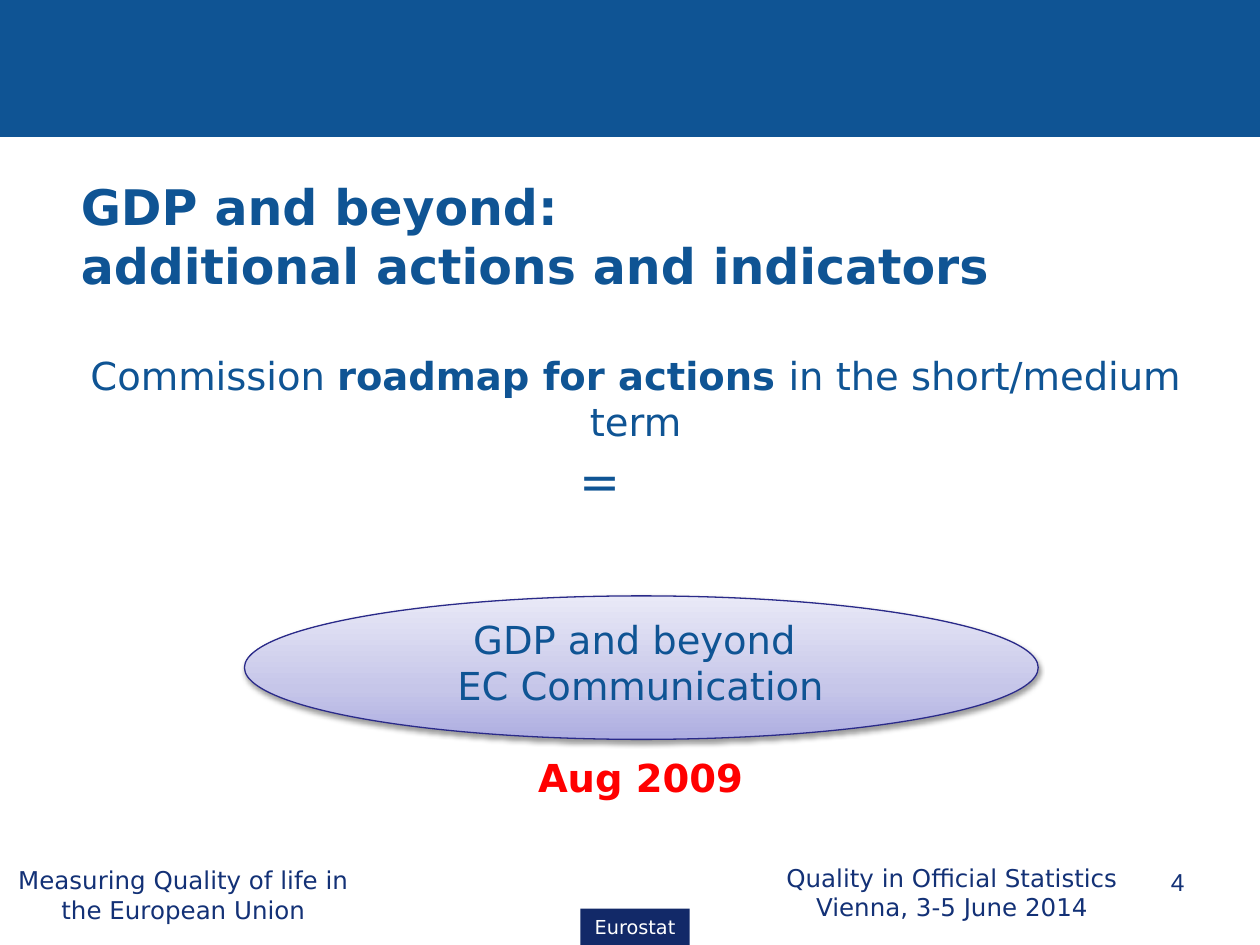
from lxml import etree
from pptx import Presentation
from pptx.dml.color import RGBColor
from pptx.enum import shapes, text
from pptx.oxml import parse_xml
from pptx.oxml.ns import qn
from pptx.util import Pt

HUE = {"blue": "0F5494", "navy": "133176", "badge": "122968", "white": "FFFFFF",
       "red": "FF0000", "edge": "2A2A89"}
FADE = [(0, "ADADE1"), (35, "C6C6E9"), (100, "E9E9F7")]
FONT = "DejaVu Sans"
NS = 'xmlns:a="http://schemas.openxmlformats.org/drawingml/2006/main"'
MID = text.PP_ALIGN.CENTER
LEFT = text.PP_ALIGN.LEFT
RIGHT = text.PP_ALIGN.RIGHT


def rgb(name):
    return RGBColor.from_string(HUE[name])


class Deck:
    def __init__(self, wide, high):
        self.prs = Presentation()
        self.prs.slide_width, self.prs.slide_height = Pt(wide), Pt(high)
        self.slide = self.prs.slides.add_slide(self.prs.slide_layouts[1])

    def style(self, par, size, hue, align=MID, bold=False, font=FONT):
        par.alignment = align
        for run in par.runs:
            run.font.name, run.font.size = font, Pt(size)
            run.font.bold = bold
            run.font.color.rgb = rgb(hue)

    def place(self, shape, box):
        shape.left, shape.top, shape.width, shape.height = map(Pt, box)
        frame = shape.text_frame
        frame.word_wrap = True
        frame.auto_size = text.MSO_AUTO_SIZE.NONE
        return frame

    def title(self, box, words, size):
        frame = self.place(self.slide.shapes.title, box)
        frame.vertical_anchor = text.MSO_ANCHOR.MIDDLE
        frame.text = words
        self.style(frame.paragraphs[0], size, "blue", LEFT, True)

    def body(self, box):
        return self.place(self.slide.placeholders[1], box)

    def plain(self, par, indent=0):
        """Remove the bullet and set the left margin."""
        props = par._p.get_or_add_pPr()
        props.set("marL", str(Pt(indent)))
        props.set("indent", "0")
        etree.SubElement(props, qn("a:buNone"))

    def label(self, box, words, size, hue, **look):
        frame = self.place(self.slide.shapes.add_textbox(0, 0, 0, 0), box)
        frame.text = words
        for par in frame.paragraphs:
            self.style(par, size, hue, **look)
        return frame

    def shape(self, kind, box, fill=None, line=None):
        item = self.slide.shapes.add_shape(kind, *map(Pt, box))
        item.shadow.inherit = False
        if fill:
            item.fill.solid()
            item.fill.fore_color.rgb = rgb(fill)
        if line:
            item.line.color.rgb = rgb(line)
            item.line.width = Pt(0.75)
        else:
            item.line.fill.background()
        return item

    def fade(self, item, stops):
        """Fill from bottom to top and add a soft shadow."""
        item.fill.gradient()
        item.fill.gradient_angle = 90
        grad = item._element.spPr.find(qn("a:gradFill"))
        gs = "".join(f'<a:gs pos="{at * 1000}"><a:srgbClr val="{hue}"/></a:gs>'
                     for at, hue in stops)
        grad.replace(grad.find(qn("a:gsLst")),
                     parse_xml(f"<a:gsLst {NS}>{gs}</a:gsLst>"))
        grad.find(qn("a:lin")).set("ang", "16200000")
        item._element.spPr.find(qn("a:effectLst")).append(parse_xml(
            f'<a:outerShdw {NS} blurRad="{Pt(3.1)}" dist="{Pt(1.6)}" dir="5400000" '
            'rotWithShape="0"><a:srgbClr val="000000"><a:alpha val="38000"/>'
            '</a:srgbClr></a:outerShdw>'))


def main():
    deck = Deck(720, 540)
    kinds = shapes.MSO_SHAPE

    deck.shape(kinds.RECTANGLE, (0, 0, 720, 78), "blue", "blue")
    deck.title((39, 106, 648, 57),
               "GDP and beyond: \vadditional actions and indicators", 28)

    frame = deck.body((36.7, 197.3, 653, 286))
    road = frame.paragraphs[0]
    deck.plain(road)
    for words in ("Commission ", "roadmap for actions ", "in the short/medium term"):
        road.add_run().text = words
    deck.style(road, 22, "blue")
    road.space_before = Pt(0)
    road.runs[1].font.bold = True
    equal = frame.add_paragraph()
    equal.text = "="
    deck.plain(equal, 287)
    deck.style(equal, 28, "blue", LEFT)
    equal.space_before = Pt(4)

    oval = deck.shape(kinds.OVAL, (139.7, 340.5, 453.6, 82), line="edge")
    deck.fade(oval, FADE)
    note = deck.label((216, 348.5, 300, 140),
                      "GDP and beyond \nEC Communication\nAug 2009", 22, "blue")
    date = note.paragraphs[2]
    deck.style(date, 22, "red", bold=True)
    date.space_before = Pt(26)

    deck.label((0, 491, 209.5, 38),
               "Measuring Quality of life in the European Union", 14, "navy")
    deck.label((427.7, 489.6, 232.6, 41),
               "Quality in Official Statistics\vVienna, 3-5 June 2014", 14, "navy")
    deck.label((516, 491.8, 168, 37.4), "4", 14, "navy", align=RIGHT, font="Arial")

    badge = deck.shape(kinds.RECTANGLE, (331.7, 519.2, 62.4, 20.8), "badge")
    badge.text_frame.text = "Eurostat"
    badge.text_frame.word_wrap = False
    deck.style(badge.text_frame.paragraphs[0], 11, "white")

    deck.prs.save("out.pptx")


if __name__ == "__main__":
    main()
